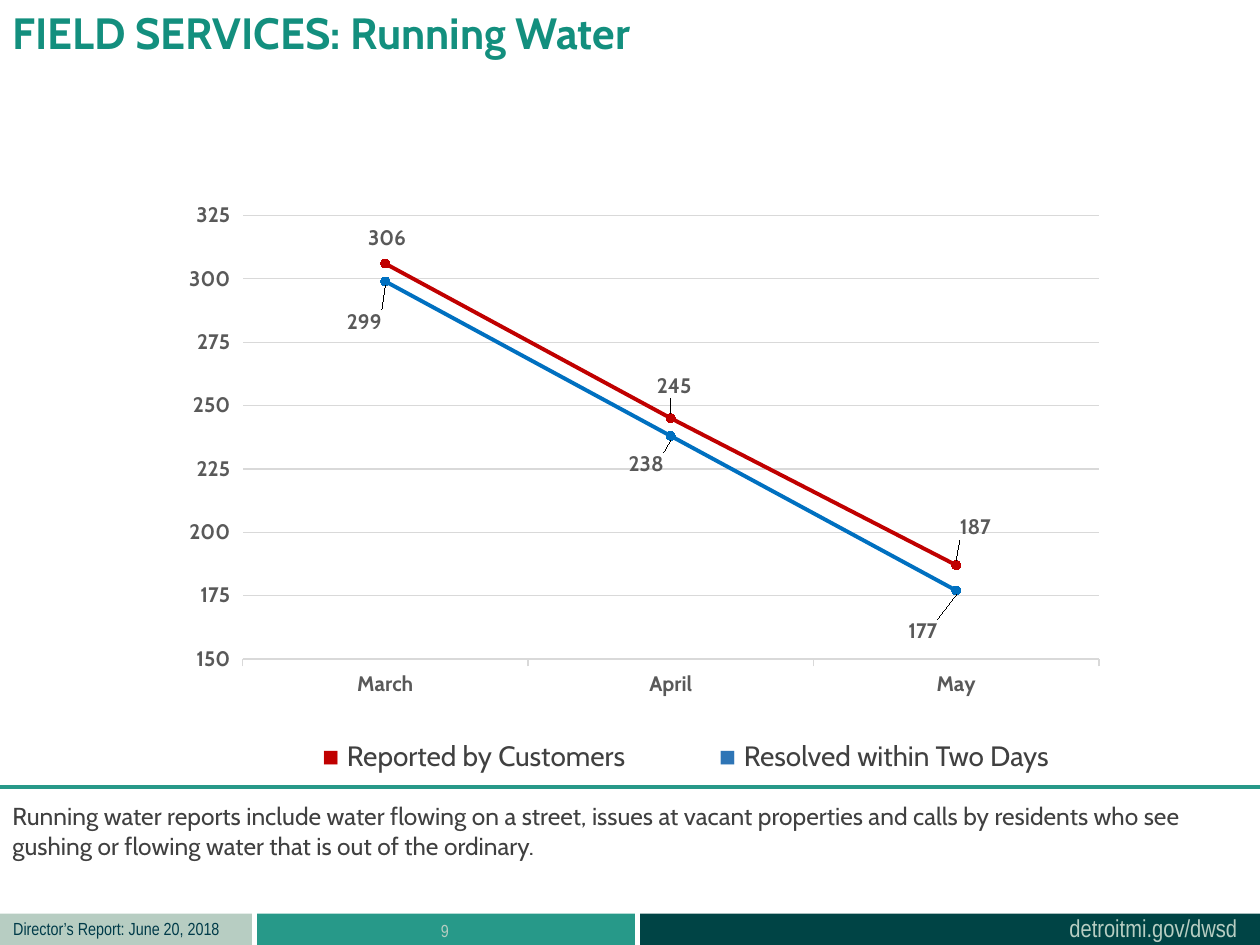
"""Build the running water slide with its line chart and footer."""
import pptx
import pptx.util
import pptx.dml.color
import pptx.chart.data
import pptx.enum.chart
import pptx.enum.shapes
import pptx.enum.text
import pptx.oxml
import pptx.oxml.ns

Pt = pptx.util.Pt
ALIGN = pptx.enum.text.PP_ALIGN
LABEL = pptx.enum.chart.XL_LABEL_POSITION

THEME = {
    "teal": "279989", "deep": "004445", "sage": "B7CDC2", "navy": "003B49",
    "title": "138F7E", "body": "404040", "axis": "595959", "grid": "D9D9D9",
    "red": "C00000", "blue": "0070C0", "key_blue": "2E75B6",
    "main": "Cabin", "footer": "Arial Narrow", "symbol": "Arial",
    "title_size": 25, "key_size": 16, "body_size": 14, "chart_size": 12, "footer_size": 10,
}
SLIDE_WIDTH, SLIDE_HEIGHT = 720, 540
BAR_TOP, BAR_HEIGHT, BAR_GAP = 522, 18, 2.88
BARS = [(144, "sage"), (216, "teal"), (None, "deep")]

TEXTS = [
    {"box": (604, 518.4, 111.6, 24.5), "wrap": False,
     "runs": [("detroitmi.gov/dwsd", "body_size", "sage", "footer", False)]},
    {"box": (0.5, 521.3, 132.5, 19.4), "wrap": False,
     "runs": [("Director’s Report: June 20, 2018", "footer_size", "navy", "footer", False)]},
    {"box": (146.2, 522, 216, 28.8), "align": ALIGN.CENTER,
     "runs": [("9", "footer_size", "sage", "footer", False)]},
    {"box": (0, 0, 546.5, 55.4),
     "runs": [("FIELD SERVICES: Running Water", "title_size", "title", "main", True)]},
    {"box": (0, 454.3, 720, 41),
     "runs": [("Running water reports include water flowing on a street, issues at vacant "
               "properties and calls by residents who see gushing or flowing water that is "
               "out of the ordinary.", "body_size", "body", "main", False)]},
    {"box": (177.1, 418.3, 434.9, 26.6), "tab": 226.8,
     "runs": [("■ ", "key_size", "red", "symbol", False),
              ("Reported by Customers\t", "key_size", "body", "main", False),
              ("■ ", "key_size", "key_blue", "symbol", False),
              ("Resolved within Two Days", "key_size", "body", "main", False)]},
]

CHART_BOX = (80.6, 109.4, 558, 320.4)
PLOT = {"x": 0.104, "y": 0.043, "w": 0.877, "h": 0.791}
MONTHS = ["March", "April", "May"]
SERIES = [
    {"name": "Series 1", "values": (306, 245, 187), "color": "red", "position": LABEL.ABOVE,
     "shifts": [(1, -2), (2, -6), (11, -9)]},
    {"name": "Series 2", "values": (299, 238, 177), "color": "blue", "position": LABEL.BELOW,
     "shifts": [(-12, 11), (-14, 4), (-19, 11)]},
]


def color(name):
    return pptx.dml.color.RGBColor.from_string(THEME[name])


def apply(target, values):
    for name, value in values.items():
        setattr(target, name, value)


def style_font(font, size, color_name, face, bold):
    apply(font, {"size": Pt(THEME[size]), "name": THEME[face], "bold": bold})
    font.color.rgb = color(color_name)


def style_line(line, color_name, width):
    line.color.rgb = color(color_name)
    line.width = Pt(width)


def add_bars(slide):
    left = 0
    for width, fill in BARS:
        width = width or SLIDE_WIDTH - left
        shape = slide.shapes.add_shape(pptx.enum.shapes.MSO_SHAPE.RECTANGLE,
                                       Pt(left), Pt(BAR_TOP), Pt(width), Pt(BAR_HEIGHT))
        shape.shadow.inherit = False
        shape.fill.solid()
        shape.fill.fore_color.rgb = color(fill)
        shape.line.fill.background()
        left += width + BAR_GAP


def add_text(slide, item):
    frame = slide.shapes.add_textbox(*map(Pt, item["box"])).text_frame
    frame.word_wrap = item.get("wrap", True)
    paragraph = frame.paragraphs[0]
    paragraph.alignment = item.get("align", ALIGN.LEFT)
    if "tab" in item:
        tabs = pptx.oxml.parse_xml(
            f'<a:tabLst {pptx.oxml.ns.nsdecls("a")}>'
            f'<a:tab pos="{Pt(item["tab"])}" algn="l"/></a:tabLst>')
        paragraph._p.get_or_add_pPr().append(tabs)
    for text, *style in item["runs"]:
        run = paragraph.add_run()
        run.text = text
        style_font(run.font, *style)


def manual_layout(values, inner=False):
    target = '<c:layoutTarget val="inner"/>' if inner else ""
    modes = '<c:xMode val="edge"/><c:yMode val="edge"/>' if inner else ""
    parts = "".join(f'<c:{key} val="{value:.4f}"/>' for key, value in values.items())
    return pptx.oxml.parse_xml(
        f'<c:layout {pptx.oxml.ns.nsdecls("c")}><c:manualLayout>'
        f'{target}{modes}{parts}</c:manualLayout></c:layout>')


def style_series(series, item):
    series.smooth = False
    style_line(series.format.line, item["color"], 2.25)
    apply(series.marker, {"style": pptx.enum.chart.XL_MARKER_STYLE.CIRCLE, "size": 5})
    series.marker.format.fill.solid()
    series.marker.format.fill.fore_color.rgb = color(item["color"])
    style_line(series.marker.format.line, item["color"], 0.75)
    labels = series.data_labels
    apply(labels, {"show_value": True, "position": item["position"],
                   "number_format": "#,##0", "number_format_is_linked": False})
    style_font(labels.font, "chart_size", "axis", "main", True)
    for index, (across, down) in enumerate(item["shifts"]):
        label = series.points[index].data_label
        style_font(label.font, "chart_size", "axis", "main", True)
        label.position = item["position"]
        shift = {"x": across / CHART_BOX[2], "y": down / CHART_BOX[3]}
        element = labels._element.xpath(f'c:dLbl/c:idx[@val="{index}"]')[0]
        element.addnext(manual_layout(shift))


def add_chart(slide):
    data = pptx.chart.data.CategoryChartData(number_format="#,##0")
    data.categories = MONTHS
    for item in SERIES:
        data.add_series(item["name"], item["values"])
    chart = slide.shapes.add_chart(pptx.enum.chart.XL_CHART_TYPE.LINE_MARKERS,
                                   *map(Pt, CHART_BOX), data).chart
    apply(chart, {"has_title": False, "has_legend": False})
    style_font(chart.font, "chart_size", "axis", "main", True)
    chart.plots[0].vary_by_categories = False
    plot_area = chart._chartSpace.chart.plotArea
    for old in plot_area.xpath("c:layout"):
        plot_area.remove(old)
    plot_area.insert(0, manual_layout(PLOT, inner=True))
    for axis in (chart.category_axis, chart.value_axis):
        axis.major_tick_mark = pptx.enum.chart.XL_TICK_MARK.OUTSIDE
        style_font(axis.tick_labels.font, "chart_size", "axis", "main", True)
    style_line(chart.category_axis.format.line, "grid", 0.75)
    values = chart.value_axis
    apply(values, {"minimum_scale": 150, "maximum_scale": 325, "major_unit": 25,
                   "has_major_gridlines": True})
    apply(values.tick_labels, {"number_format": "#,##0", "number_format_is_linked": False})
    values.format.line.fill.background()
    style_line(values.major_gridlines.format.line, "grid", 0.75)
    for series, item in zip(chart.plots[0].series, SERIES):
        style_series(series, item)


def add_divider(slide):
    line = slide.shapes.add_connector(pptx.enum.shapes.MSO_CONNECTOR.STRAIGHT,
                                      Pt(SLIDE_WIDTH), Pt(449.6), Pt(0), Pt(449.6))
    style_line(line.line, "teal", 2.25)
    line._element.spPr.append(
        pptx.oxml.parse_xml(f'<a:effectLst {pptx.oxml.ns.nsdecls("a")}/>'))


def main():
    presentation = pptx.Presentation()
    apply(presentation, {"slide_width": Pt(SLIDE_WIDTH), "slide_height": Pt(SLIDE_HEIGHT)})
    slide = presentation.slides.add_slide(presentation.slide_layouts[6])
    add_bars(slide)
    add_chart(slide)
    add_divider(slide)
    for item in TEXTS:
        add_text(slide, item)
    presentation.save("out.pptx")


if __name__ == "__main__":
    main()
